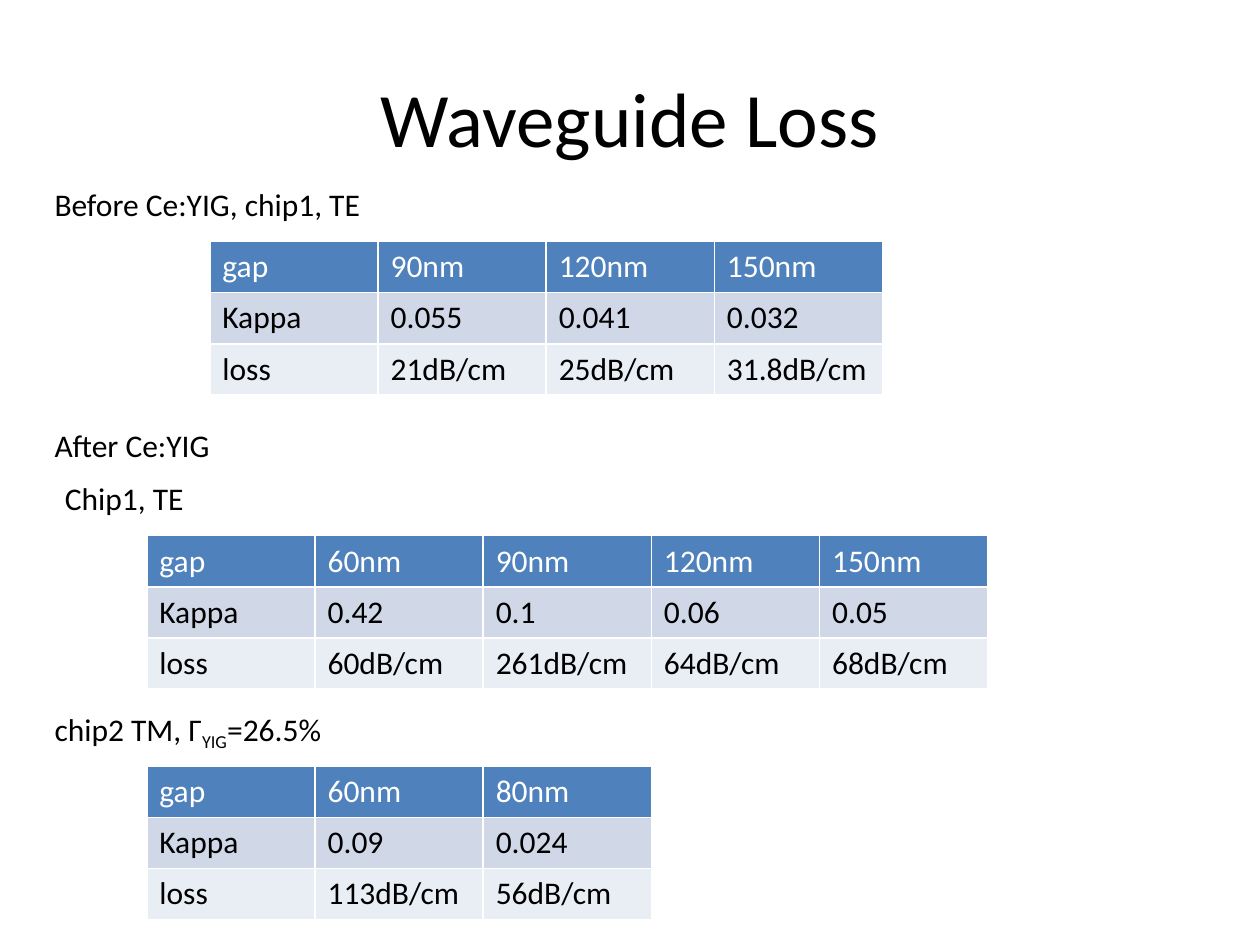
from lxml import etree
from pptx import Presentation
from pptx.dml.color import RGBColor
from pptx.enum.text import MSO_ANCHOR, MSO_AUTO_SIZE, PP_ALIGN
from pptx.oxml.ns import qn
from pptx.util import Cm, Pt

CENTER = PP_ALIGN.CENTER
MIDDLE = MSO_ANCHOR.MIDDLE
FIT_SHAPE = MSO_AUTO_SIZE.SHAPE_TO_FIT_TEXT
TITLE_ONLY = 5

BLACK = RGBColor(0x00, 0x00, 0x00)
WHITE = RGBColor(0xFF, 0xFF, 0xFF)
HEADER_BLUE = RGBColor(0x4F, 0x81, 0xBD)
BAND_DARK = RGBColor(0xD0, 0xD8, 0xE8)
BAND_LIGHT = RGBColor(0xE9, 0xED, 0xF4)

ROW_STYLES = ((HEADER_BLUE, WHITE), (BAND_DARK, BLACK), (BAND_LIGHT, BLACK))
COLUMN_WIDTH = 3.39
ROW_HEIGHT = 1.03
LABEL_HEIGHT = 1.02

LABELS = (
    (0.85, 3.6, 6.76, ("Before Ce:YIG, chip1, TE",)),
    (0.85, 8.47, 3.68, ("After Ce:YIG",)),
    (1.06, 9.53, 2.95, ("Chip1, TE",)),
    (0.85, 14.18, 6.02, ("chip2 TM, Г", "YIG", "=26.5%")),
)
TABLES = (
    (4.23, 4.87, (
        ("gap", "90nm", "120nm", "150nm"),
        ("Kappa", "0.055", "0.041", "0.032"),
        ("loss", "21dB/cm", "25dB/cm", "31.8dB/cm"),
    )),
    (2.96, 10.8, (
        ("gap", "60nm", "90nm", "120nm", "150nm"),
        ("Kappa", "0.42", "0.1", "0.06", "0.05"),
        ("loss", "60dB/cm", "261dB/cm", "64dB/cm", "68dB/cm"),
    )),
    (2.96, 15.45, (
        ("gap", "60nm", "80nm"),
        ("Kappa", "0.09", "0.024"),
        ("loss", "113dB/cm", "56dB/cm"),
    )),
)


class SlideBuilder:
    """Hold the text style and the current slide, and add elements to it."""

    def __init__(self, slide, font="Calibri", size=18):
        self.slide = slide
        self.font = font
        self.size = size

    def run(self, paragraph, text, color=BLACK, size=None):
        run = paragraph.add_run()
        run.text = text
        run.font.name = self.font
        run.font.size = Pt(size or self.size)
        run.font.bold = False
        run.font.color.rgb = color
        return run

    def title(self, text):
        title = self.slide.shapes.title
        title.left, title.top = Cm(1.27), Cm(0.76)
        title.width, title.height = Cm(22.86), Cm(3.18)
        title.text_frame.vertical_anchor = MIDDLE
        paragraph = title.text_frame.paragraphs[0]
        paragraph.alignment = CENTER
        self.run(paragraph, text, size=44)

    def label(self, left, top, width, parts):
        shape = self.slide.shapes.add_textbox(Cm(left), Cm(top), Cm(width), Cm(LABEL_HEIGHT))
        shape.text_frame.word_wrap = False
        shape.text_frame.auto_size = FIT_SHAPE
        for index, text in enumerate(parts):
            run = self.run(shape.text_frame.paragraphs[0], text)
            if index == 1:
                run.font._element.set("baseline", "-25000")

    def borders(self, cell):
        properties = cell._tc.get_or_add_tcPr()
        for side in ("lnL", "lnR", "lnT", "lnB"):
            line = etree.SubElement(properties, qn(f"a:{side}"), w=str(Pt(1)))
            fill = etree.SubElement(line, qn("a:solidFill"))
            etree.SubElement(fill, qn("a:srgbClr"), val=str(WHITE))

    def table(self, left, top, rows):
        row_count, column_count = len(rows), len(rows[0])
        table = self.slide.shapes.add_table(
            row_count, column_count, Cm(left), Cm(top),
            Cm(column_count * COLUMN_WIDTH), Cm(row_count * ROW_HEIGHT),
        ).table
        for row_index, (values, (fill, color)) in enumerate(zip(rows, ROW_STYLES)):
            for column_index, value in enumerate(values):
                cell = table.cell(row_index, column_index)
                self.borders(cell)
                cell.fill.solid()
                cell.fill.fore_color.rgb = fill
                self.run(cell.text_frame.paragraphs[0], value, color)


def main():
    presentation = Presentation()
    presentation.slide_width, presentation.slide_height = Cm(25.4), Cm(19.05)
    slide = presentation.slides.add_slide(presentation.slide_layouts[TITLE_ONLY])
    builder = SlideBuilder(slide)
    builder.title("Waveguide Loss")
    for label in LABELS:
        builder.label(*label)
    for table in TABLES:
        builder.table(*table)
    presentation.save("out.pptx")


if __name__ == "__main__":
    main()
